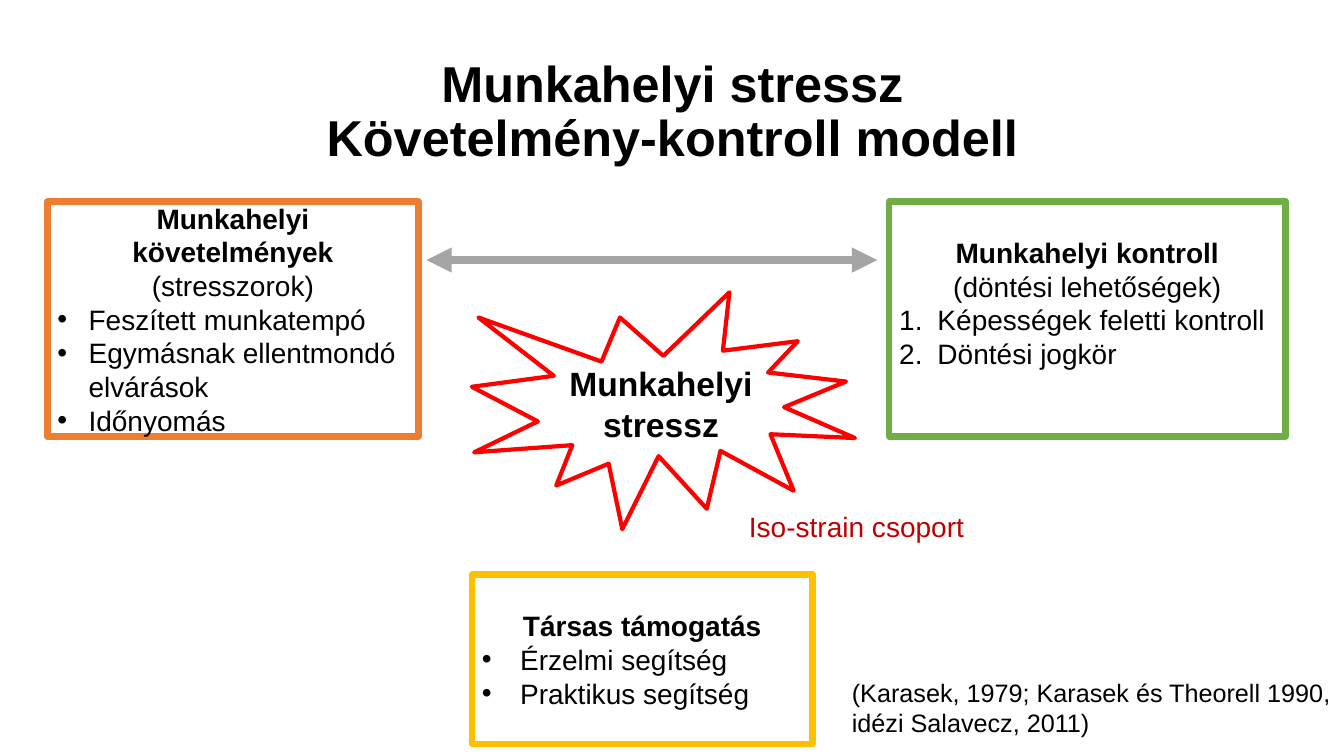
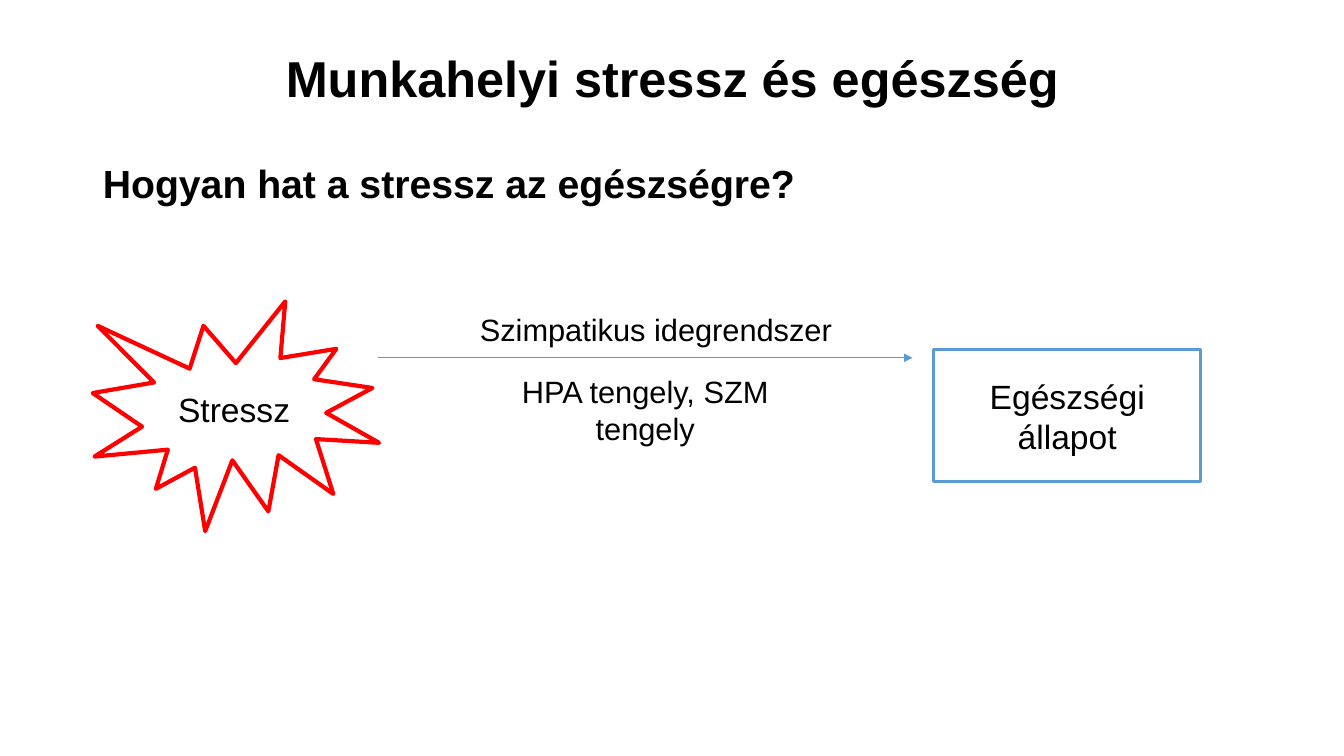
import pptx
import pptx.util
import pptx.dml.color
import pptx.enum.shapes
import pptx.enum.text
import pptx.oxml
import pptx.oxml.ns

PX = 9144
FONT = "Arial"
BLACK, WHITE, RED, DARK_RED = "000000", "FFFFFF", "FF0000", "C00000"
ORANGE, GREEN, GOLD, GREY, BLUE = "ED7D31", "70AD47", "FFC000", "A5A5A5", "5B9BD5"
ALIGN = pptx.enum.text.PP_ALIGN
ANCHOR = pptx.enum.text.MSO_ANCHOR
AUTO_SIZE = pptx.enum.text.MSO_AUTO_SIZE
SHAPE = pptx.enum.shapes.MSO_SHAPE
TITLE_ONLY, TITLE_AND_BODY = 5, 1


def px(*values):
    return [pptx.util.Emu(v * PX) for v in values]


def rgb(value):
    return pptx.dml.color.RGBColor.from_string(value)


def add_xml(parent, tag, **attributes):
    child = parent.makeelement(pptx.oxml.ns.qn(tag), attributes)
    parent.append(child)
    return child


def add_text(tf, text, size=20, bold=False, color=BLACK, align=ALIGN.LEFT,
             bullet=None, indent=0, spacing=None, before=0):
    p = tf.paragraphs[0]
    if p.runs:
        p = tf.add_paragraph()
    p.alignment = align
    p.line_spacing = spacing
    p.space_before = pptx.util.Pt(before)
    r = p.add_run()
    r.text = text
    r.font.name = FONT
    r.font.size = pptx.util.Pt(size)
    r.font.bold = bold
    r.font.color.rgb = rgb(color)
    pPr = p._p.get_or_add_pPr()
    pPr.set("marL", str(indent * PX))
    pPr.set("indent", str(-indent * PX))
    if bullet == "number":
        add_xml(pPr, "a:buAutoNum", type="arabicPeriod")
    elif bullet:
        add_xml(pPr, "a:buFont", typeface=FONT)
        add_xml(pPr, "a:buChar", char=bullet)
    else:
        add_xml(pPr, "a:buNone")


def fill_placeholder(sp, box, lines, anchor, **fmt):
    sp.left, sp.top, sp.width, sp.height = px(*box)
    tf = sp.text_frame
    tf.auto_size = AUTO_SIZE.NONE
    tf.vertical_anchor = anchor
    for line in lines:
        add_text(tf, line, bold=True, spacing=0.9, **fmt)


def add_slide(prs, layout, title_box, *title_lines):
    s = prs.slides.add_slide(prs.slide_layouts[layout])
    fill_placeholder(s.shapes.title, title_box, title_lines, ANCHOR.MIDDLE,
                     size=36, align=ALIGN.CENTER)
    return s


def add_outline(s, kind, box, color, width):
    sp = s.shapes.add_shape(kind, *px(*box))
    sp.shadow.inherit = False
    sp.fill.solid()
    sp.fill.fore_color.rgb = rgb(WHITE)
    sp.line.color.rgb = rgb(color)
    sp.line.width = pptx.util.Pt(width)
    tf = sp.text_frame
    tf.word_wrap = True
    tf.vertical_anchor = ANCHOR.MIDDLE
    return tf


def add_factor(s, box, color, heading, items, note=None, bullet="•", indent=38):
    tf = add_outline(s, SHAPE.RECTANGLE, box, color, 4.5)
    add_text(tf, heading, bold=True, align=ALIGN.CENTER)
    if note:
        add_text(tf, note, align=ALIGN.CENTER)
    for item in items:
        add_text(tf, item, bullet=bullet, indent=indent)
    return tf


def add_burst(s, box, text, bold=False):
    tf = add_outline(s, SHAPE.EXPLOSION1, box, RED, 3)
    add_text(tf, text, size=24, bold=bold, align=ALIGN.CENTER)


def add_label(s, box, text, **fmt):
    tf = s.shapes.add_textbox(*px(*box)).text_frame
    tf.word_wrap = True
    tf.auto_size = AUTO_SIZE.SHAPE_TO_FIT_TEXT
    add_text(tf, text, **fmt)


def add_arrow(s, x1, x2, y, color, width, ends):
    line = s.shapes.add_connector(pptx.enum.shapes.MSO_CONNECTOR.STRAIGHT,
                                  *px(x1, y, x2, y))
    line.line.color.rgb = rgb(color)
    line.line.width = pptx.util.Pt(width)
    for end in ends:
        add_xml(line.line._get_or_add_ln(), end, type="triangle")
    add_xml(line._element.spPr, "a:effectLst")


def build_model(prs):
    s = add_slide(prs, TITLE_ONLY, (92, 40, 1150, 145),
                  "Munkahelyi stressz", "Követelmény-kontroll modell")
    top, height = 200, 233
    add_factor(s, (47, top, 368, height), ORANGE, "Munkahelyi követelmények",
               ["Feszített munkatempó", "Egymásnak ellentmondó elvárások", "Időnyomás"],
               note="(stresszorok)", indent=31)
    control = add_factor(s, (882, top, 393, height), GREEN, "Munkahelyi kontroll",
                         ["Képességek feletti kontroll", "Döntési jogkör"],
                         note="(döntési lehetőségek)", bullet="number")
    control.margin_bottom = px(37)[0]
    add_factor(s, (468, 570, 338, 168), GOLD, "Társas támogatás",
               ["Érzelmi segítség", "Praktikus segítség"])
    add_burst(s, (468, 290, 380, 235), "Munkahelyi stressz", bold=True)
    add_arrow(s, 423, 870, 258, GREY, 6, ["a:headEnd", "a:tailEnd"])
    add_label(s, (835, 667, 499, 71),
              "(Karasek, 1979; Karasek és Theorell 1990, idézi Salavecz, 2011)", size=18)
    add_label(s, (733, 501, 266, 44), "Iso-strain csoport", color=DARK_RED)


def build_health(prs):
    s = add_slide(prs, TITLE_AND_BODY, (92, 40, 1150, 82),
                  "Munkahelyi stressz és egészség")
    fill_placeholder(s.placeholders[1], (92, 158, 1150, 476),
                     ["Hogyan hat a stressz az egészségre?"], ANCHOR.TOP,
                     size=28, before=10)
    add_burst(s, (92, 299, 284, 228), "Stressz")
    tf = add_outline(s, SHAPE.RECTANGLE, (926, 347, 265, 131), BLUE, 2.25)
    add_text(tf, "Egészségi állapot", size=24, align=ALIGN.CENTER)
    add_arrow(s, 375, 905, 355, BLUE, 0.5, ["a:tailEnd"])
    for box, text in [((462, 303, 377, 47), "Szimpatikus idegrendszer"),
                      ((488, 365, 304, 84), "HPA tengely, SZM tengely")]:
        add_label(s, box, text, size=22, align=ALIGN.CENTER)


def main():
    prs = pptx.Presentation()
    prs.slide_width, prs.slide_height = px(1333, 750)
    build_model(prs)
    build_health(prs)
    prs.save("out.pptx")


if __name__ == "__main__":
    main()
